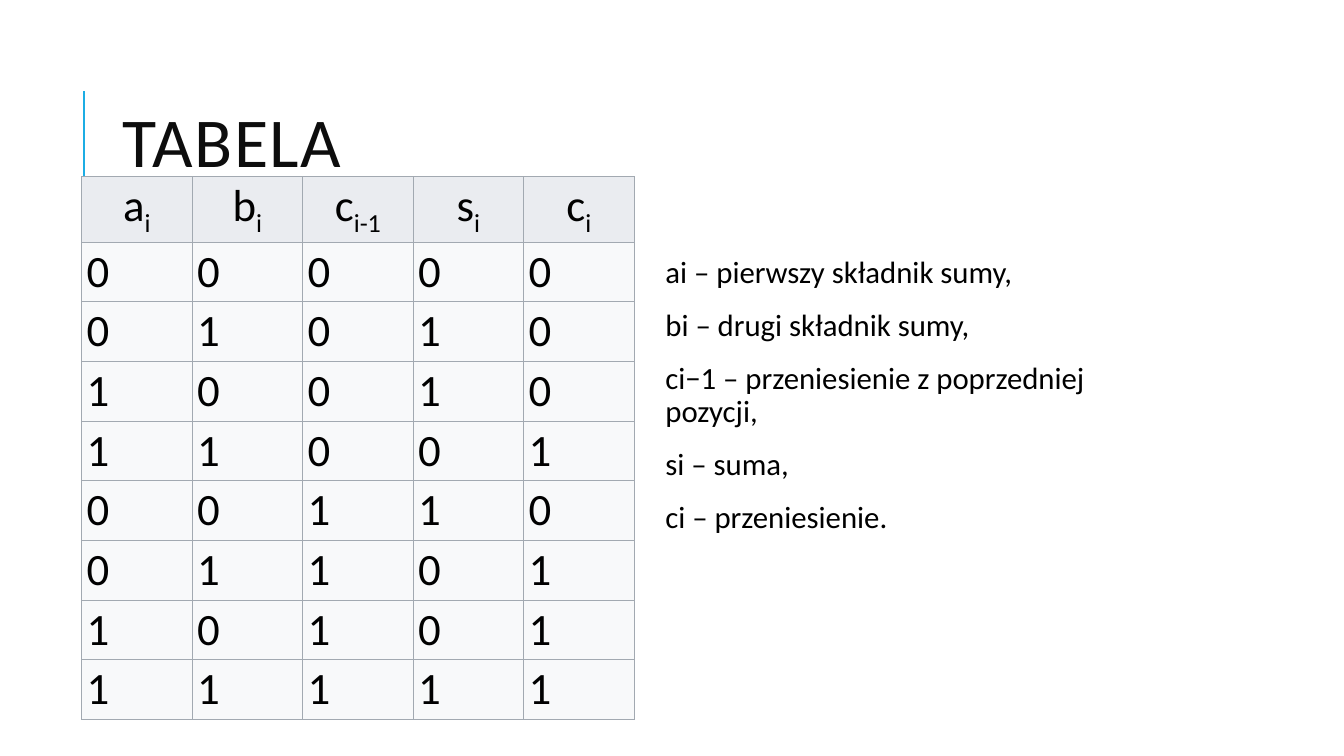
from dataclasses import dataclass

import pptx
import pptx.dml.color
import pptx.enum.shapes
import pptx.enum.text
import pptx.oxml
import pptx.oxml.ns
import pptx.util

Inches, Pt = pptx.util.Inches, pptx.util.Pt
PP_ALIGN = pptx.enum.text.PP_ALIGN
MIDDLE = pptx.enum.text.MSO_ANCHOR.MIDDLE


@dataclass(frozen=True)
class Theme:
    font: str = "Calibri"
    title_size: float = 50
    cell_size: float = 32
    legend_size: float = 22
    title: str = "0D0D0D"
    text: str = "000000"
    accent: str = "1CADE4"
    header_fill: str = "EAECF0"
    body_fill: str = "F8F9FA"
    border: str = "A2A9B1"


THEME = Theme()
HEADINGS = [("a", "i"), ("b", "i"), ("c", "i-1"), ("s", "i"), ("c", "i")]
TRUTH_ROWS = ["00000", "01010", "10010", "11001",
              "00110", "01101", "10101", "11111"]
LEGEND = [
    "ai – pierwszy składnik sumy,",
    "bi – drugi składnik sumy,",
    "ci−1 – przeniesienie z poprzedniej pozycji,",
    "si – suma,",
    "ci – przeniesienie.",
]


def rgb(value):
    return pptx.dml.color.RGBColor.from_string(value)


def style_run(r, size, color):
    r.font.name = THEME.font
    r.font.size = Pt(size)
    r.font.color.rgb = rgb(color)


def set_insets(target, x, y):
    target.margin_left = target.margin_right = Inches(x)
    target.margin_top = target.margin_bottom = Inches(y)


def add_text_box(s, box):
    tf = s.shapes.add_textbox(*map(Inches, box)).text_frame
    tf.word_wrap = True
    return tf


def add_title(s, box, text):
    """Place the title, with the accent rule to the left of its box."""
    left, top, _, _ = box
    rule_x, rule_top = left - 0.29, top + 0.26
    rule = s.shapes.add_connector(
        pptx.enum.shapes.MSO_CONNECTOR.STRAIGHT,
        Inches(rule_x), Inches(rule_top + 1), Inches(rule_x), Inches(rule_top))
    rule.line.color.rgb = rgb(THEME.accent)
    rule.line.width = Pt(1.5)
    pptx.oxml.ns.qn("a:effectLst")
    rule._element.spPr.append(pptx.oxml.parse_xml(
        f'<a:effectLst {pptx.oxml.ns.nsdecls("a")}/>'))

    tf = add_text_box(s, box)
    tf.vertical_anchor = MIDDLE
    tf.text = text
    p = tf.paragraphs[0]
    p.line_spacing = 0.8
    r = p.runs[0]
    style_run(r, THEME.title_size, THEME.title)
    r.font._element.set("spc", "100")


def style_cell(cell, fill):
    """Set insets, borders and fill; borders must precede the fill in XML."""
    set_insets(cell, 0.05, 0.02)
    cell.vertical_anchor = MIDDLE
    tc_pr = cell._tc.get_or_add_tcPr()
    for side in "LRTB":
        tc_pr.append(pptx.oxml.parse_xml(
            f'<a:ln{side} {pptx.oxml.ns.nsdecls("a")} w="{Pt(0.6)}">'
            f'<a:solidFill><a:srgbClr val="{THEME.border}"/></a:solidFill>'
            f'</a:ln{side}>'))
    cell.fill.solid()
    cell.fill.fore_color.rgb = rgb(fill)


def add_truth_table(s, box, header_height):
    left, top, width, height = box
    n_rows, n_cols = len(TRUTH_ROWS) + 1, len(HEADINGS)
    table = s.shapes.add_table(n_rows, n_cols, *map(Inches, box)).table
    table.horz_banding = False
    for col in table.columns:
        col.width = Inches(width / n_cols)
    for i, row in enumerate(table.rows):
        row.height = Inches(
            (height - header_height) / len(TRUTH_ROWS) if i else header_height)

    for col, (symbol, index) in enumerate(HEADINGS):
        cell = table.cell(0, col)
        style_cell(cell, THEME.header_fill)
        p = cell.text_frame.paragraphs[0]
        p.alignment = PP_ALIGN.CENTER
        for text in (symbol, index):
            r = p.add_run()
            r.text = text
            style_run(r, THEME.cell_size, THEME.text)
            r.font.bold = False
        r.font._element.set("baseline", "-25000")

    for row, digits in enumerate(TRUTH_ROWS, start=1):
        for col, digit in enumerate(digits):
            cell = table.cell(row, col)
            style_cell(cell, THEME.body_fill)
            cell.text_frame.text = digit
            r = cell.text_frame.paragraphs[0].runs[0]
            style_run(r, THEME.cell_size, THEME.text)


def add_legend(s, box):
    tf = add_text_box(s, box)
    set_insets(tf, 0.05, 0.05)
    tf.text = "\n".join(LEGEND)
    for p in tf.paragraphs:
        p.line_spacing = 0.9
        p.space_before = Pt(12)
        p.space_after = Pt(2)
        style_run(p.runs[0], THEME.legend_size, THEME.text)


def main():
    prs = pptx.Presentation()
    prs.slide_width, prs.slide_height = Inches(13.33), Inches(7.5)
    s = prs.slides.add_slide(prs.slide_layouts[6])
    add_title(s, (1.12, 0.64, 10.63, 1.64), "TABELA")
    add_truth_table(s, (0.81, 1.75, 5.48, 5.39), header_height=0.65)
    add_legend(s, (6.55, 2.5, 5.2, 4.4))
    prs.save("out.pptx")


if __name__ == "__main__":
    main()
